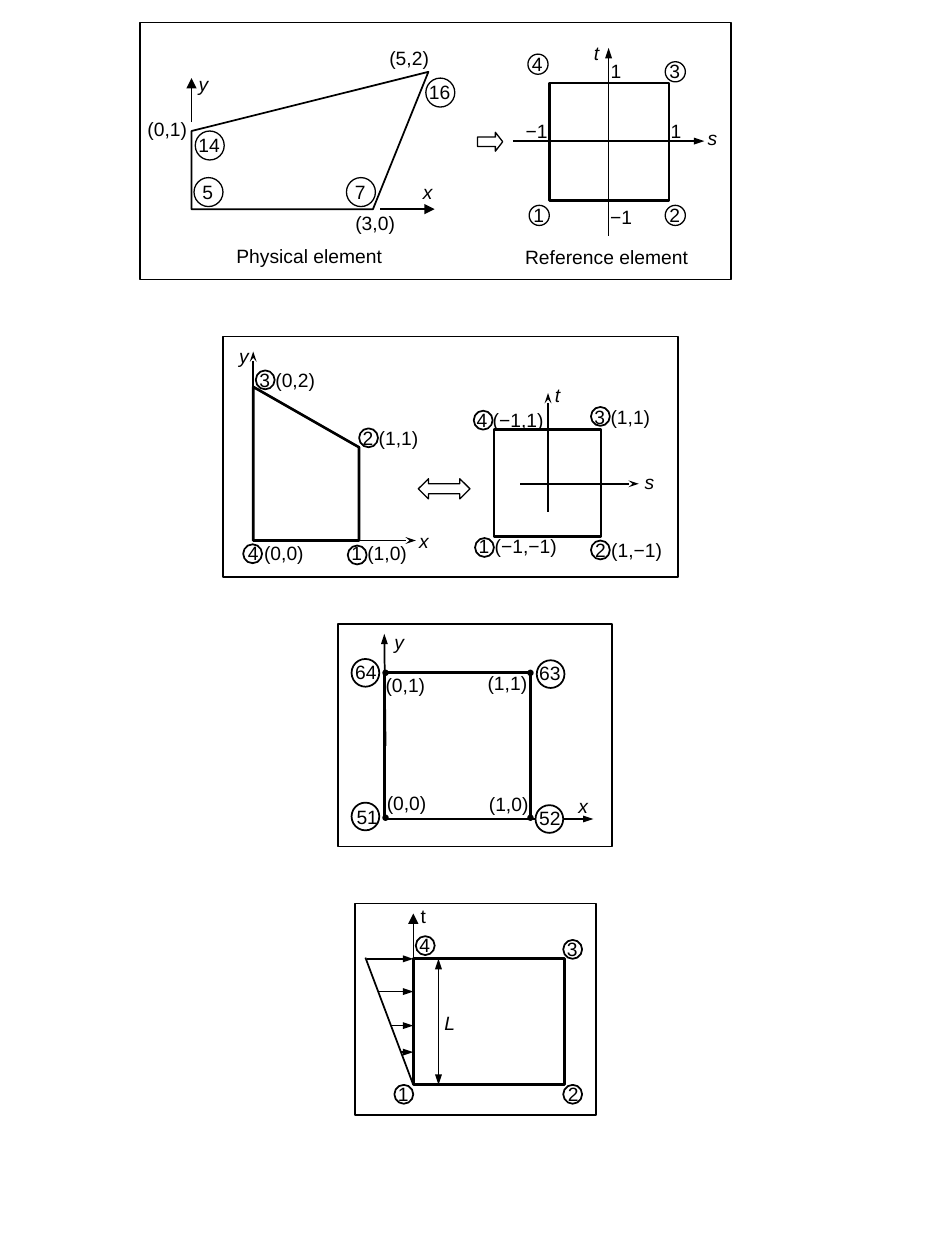
"""Draw four diagrams of finite elements with numbered nodes."""
from lxml import etree
from pptx import Presentation
from pptx.dml.color import RGBColor
from pptx.enum.shapes import MSO_CONNECTOR, MSO_SHAPE
from pptx.enum.text import MSO_ANCHOR, PP_ALIGN
from pptx.oxml.ns import qn
from pptx.util import Inches, Pt

RECT, OVAL = MSO_SHAPE.RECTANGLE, MSO_SHAPE.OVAL
RIGHT, BOTH = MSO_SHAPE.RIGHT_ARROW, MSO_SHAPE.LEFT_RIGHT_ARROW
STRAIGHT = MSO_CONNECTOR.STRAIGHT
LEFT, CENTER = PP_ALIGN.LEFT, PP_ALIGN.CENTER
TOP, MIDDLE = MSO_ANCHOR.TOP, MSO_ANCHOR.MIDDLE
COLORS = {"ink": "000000", "paper": "FFFFFF"}
BLANK = 6


def color(name):
    return RGBColor.from_string(COLORS[name])


def style(shape, weight, fill):
    shape.shadow.inherit = False
    shape.line.color.rgb = color("ink")
    shape.line.width = Pt(weight)
    if fill:
        shape.fill.solid()
        shape.fill.fore_color.rgb = color(fill)
    else:
        shape.fill.background()


def draw(group, kind, box, weight=1, fill=None, adjust=()):
    shape = group.shapes.add_shape(kind, *map(Inches, box))
    style(shape, weight, fill)
    for index, value in enumerate(adjust):
        shape.adjustments[index] = value


def outline(group, points, weight, fill=None):
    start, *rest = [(Inches(x), Inches(y)) for x, y in points]
    builder = group.shapes.build_freeform(*start, scale=1.0)
    builder.add_line_segments(rest, close=True)
    style(builder.convert_to_shape(), weight, fill)


def line(group, start, end, weight=1, tip=None, ends=("tailEnd",), size="med"):
    link = group.shapes.add_connector(STRAIGHT, *map(Inches, start + end))
    link.line.color.rgb = color("ink")
    link.line.width = Pt(weight)
    props = link.element.spPr
    if tip:
        for end_name in ends:
            etree.SubElement(props.find(qn("a:ln")), qn("a:" + end_name),
                             type=tip, w=size)
    etree.SubElement(props, qn("a:effectLst"))


def label(group, text, box, italic=False, align=CENTER, anchor=TOP,
          inset=(0, 0), wrap=False):
    frame = group.shapes.add_textbox(*map(Inches, box)).text_frame
    frame.word_wrap = wrap
    frame.vertical_anchor = anchor
    frame.margin_left = frame.margin_right = Inches(inset[0])
    frame.margin_top = frame.margin_bottom = Inches(inset[1])
    para = frame.paragraphs[0]
    para.text = text
    para.alignment = align
    para.font.name = "Arial"
    para.font.size = Pt(11)
    para.font.italic = italic
    para.font.color.rgb = color("ink")


def node(group, text, x, y, size):
    inner = size - 0.05
    label(group, text, (x + 0.02, y + 0.02, inner, inner), anchor=MIDDLE)
    draw(group, OVAL, (x, y, size, size), 0.75)


def map_panel(group):
    draw(group, RECT, (1.11, 0.18, 4.69, 2.04))
    line(group, (4.07, 1.12), (5.59, 1.12), tip="triangle", size="sm")
    line(group, (4.83, 1.87), (4.83, 0.38), tip="triangle", size="sm")
    draw(group, RECT, (4.36, 0.66, 0.95, 0.93), 1.5)
    for text, x, y, width in (("−1", 4.83, 1.63, 0.2), ("−1", 4.16, 0.95, 0.2),
                              ("1", 5.29, 0.95, 0.15), ("1", 4.81, 0.47, 0.16)):
        label(group, text, (x, y, width, 0.17))
    for text, x, y in (("y", 1.54, 0.57), ("x", 3.32, 1.43),
                       ("s", 5.58, 1), ("t", 4.66, 0.33)):
        label(group, text, (x, y, 0.15, 0.17), italic=True)
    for text, x, y in (("1", 4.2, 1.63), ("2", 5.28, 1.63),
                       ("3", 5.28, 0.49), ("4", 4.19, 0.43)):
        node(group, text, x, y, 0.16)
    draw(group, RIGHT, (3.79, 1.05, 0.2, 0.15), 0.75, "paper", (0.5, 0.386))
    label(group, "Physical element", (1.73, 1.94, 1.45, 0.22))
    label(group, "Reference element", (4.09, 1.95, 1.45, 0.22))
    outline(group, [(1.52, 1.04), (1.52, 1.66), (2.96, 1.66), (3.4, 0.57)], 1)
    line(group, (3.02, 1.66), (3.45, 1.66), tip="triangle")
    line(group, (1.52, 0.97), (1.52, 0.62), tip="triangle")
    for text, x, y in (("16", 3.38, 0.62), ("7", 2.75, 1.41),
                       ("14", 1.55, 1.04), ("5", 1.54, 1.41)):
        node(group, text, x, y, 0.23)
    for text, x, y in (("(0,1)", 1.17, 0.93), ("(5,2)", 3.09, 0.37),
                       ("(3,0)", 2.82, 1.68)):
        label(group, text, (x, y, 0.32, 0.19), align=LEFT)


def pair_panel(group):
    draw(group, RECT, (1.77, 2.67, 3.61, 1.91))
    draw(group, BOTH, (3.32, 3.8, 0.41, 0.16), 0.75, adjust=(0.5, 0.503))
    draw(group, RECT, (3.92, 3.41, 0.85, 0.85), 1.5)
    for start, end in (((4.13, 3.84), (5.07, 3.84)), ((4.35, 4.06), (4.35, 3.12)),
                       ((2.01, 4.29), (3.3, 4.29)), ((2.01, 4.29), (2.01, 2.79))):
        line(group, start, end, tip="stealth", size="sm")
    outline(group, [(2.01, 4.29), (2.85, 4.29), (2.85, 3.55), (2.01, 3.07)],
            1.5, "paper")
    for text, center, y, ring in (
            ("4 (−1,1)", 4.05, 3.24, (3.76, 3.26)),
            ("1 (−1,−1)", 4.11, 4.24, (3.77, 4.27)),
            ("2 (1,−1)", 4.99, 4.27, (4.69, 4.29)),
            ("3 (1,1)", 4.94, 3.22, (4.69, 3.23)),
            ("4 (0,0)", 2.19, 4.3, (1.93, 4.32)),
            ("1 (1,0)", 3.01, 4.3, (2.76, 4.33)),
            ("2 (1,1)", 3.1, 3.38, (2.85, 3.4)),
            ("3 (0,2)", 2.28, 2.92, (2.03, 2.94))):
        label(group, text, (center - 0.4, y, 0.8, 0.16))
        draw(group, OVAL, ring + (0.15, 0.15))
    for text, x, y in (("s", 5.06, 3.73), ("t", 4.33, 3.04),
                       ("x", 3.27, 4.2), ("y", 1.84, 2.73)):
        label(group, text, (x, y, 0.19, 0.19), italic=True)


def unit_panel(group):
    look = {"align": LEFT, "inset": (0.01, 0.01), "wrap": True}
    draw(group, RECT, (2.68, 4.95, 2.18, 1.77))
    draw(group, RECT, (3.05, 5.34, 1.16, 1.16), 1.5)
    for x in (3.04, 4.19):
        for y in (5.32, 6.47):
            draw(group, OVAL, (x, y, 0.04, 0.04), 0.75, "ink")
    line(group, (3.06, 5.92), (3.05, 5.03), tip="triangle", size="sm")
    line(group, (3.82, 6.5), (4.71, 6.5), tip="triangle", size="sm")
    for text, x, y in (("x", 4.58, 6.29), ("y", 3.12, 4.99)):
        label(group, text, (x, y, 0.19, 0.25), italic=True, **look)
    for text, x, y in (("(0,1)", 3.05, 5.33), ("(0,0)", 3.06, 6.27),
                       ("(1,1)", 3.86, 5.32), ("(1,0)", 3.87, 6.28)):
        label(group, text, (x, y, 0.42, 0.3), **look)
    for text, x, y, ring, fill in (("63", 4.27, 5.24, (4.26, 5.24), None),
                                   ("64", 2.81, 5.23, (2.79, 5.23), None),
                                   ("51", 2.82, 6.38, (2.79, 6.37), None),
                                   ("52", 4.27, 6.39, (4.25, 6.39), "paper")):
        draw(group, OVAL, ring + (0.22, 0.22), fill=fill)
        label(group, text, (x, y, 0.27, 0.24), **look)


def load_panel(group):
    draw(group, RECT, (2.82, 7.17, 1.91, 1.68))
    draw(group, RECT, (3.28, 7.61, 1.2, 1), 1.5, "paper")
    line(group, (2.9, 7.6), (3.28, 8.61))
    for x, y in ((2.91, 7.61), (3, 7.87), (3.1, 8.14), (3.18, 8.35)):
        line(group, (x, y), (3.28, y), tip="triangle", size="sm")
    line(group, (3.28, 8.54), (3.28, 7.25), 0.75, "triangle")
    line(group, (3.48, 7.61), (3.48, 8.61), 1, "triangle",
         ("headEnd", "tailEnd"), "sm")
    label(group, "L", (3.46, 8.03, 0.22, 0.24), italic=True, wrap=True)
    for text, x, y, width, height in (("t", 3.24, 7.13, 0.45, 0.38),
                                      ("4", 3.23, 7.36, 0.45, 0.38),
                                      ("1", 3.06, 8.54, 0.26, 0.26),
                                      ("3", 4.4, 7.39, 0.45, 0.38),
                                      ("2", 4.41, 8.54, 0.26, 0.26)):
        label(group, text, (x, y, width, height), align=LEFT,
              inset=(0.1, 0.05), wrap=True)
    for x, y in ((3.3, 7.43), (4.47, 7.46), (4.47, 8.61), (3.13, 8.61)):
        draw(group, OVAL, (x, y, 0.15, 0.15))


def main():
    deck = Presentation()
    deck.slide_width, deck.slide_height = Inches(7.5), Inches(10)
    slide = deck.slides.add_slide(deck.slide_layouts[BLANK])
    for panel in (pair_panel, map_panel, load_panel, unit_panel):
        panel(slide.shapes.add_group_shape())
    deck.save("out.pptx")


if __name__ == "__main__":
    main()
